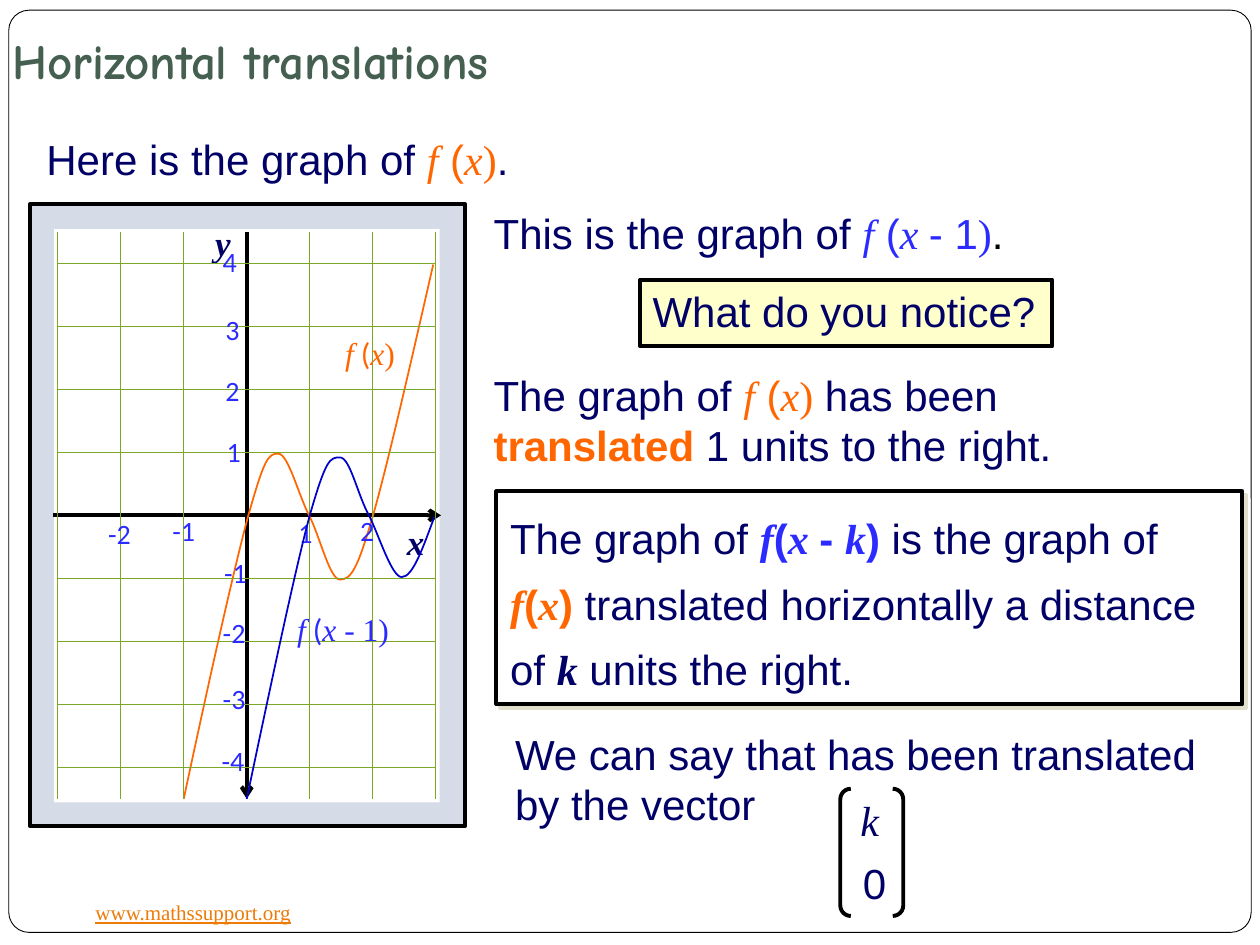
from lxml import etree
from pptx import Presentation
from pptx.dml.color import RGBColor
from pptx.enum import shapes, text
from pptx.oxml import ns
from pptx.util import Pt

SANS, SERIF, LABEL, HEADING = "Arial", "Times New Roman", "Calibri", "Comic Neue"
NAVY, BLUE, ORANGE, BLACK, WHITE = "010066", "2B2BFF", "FF6600", "000000", "FFFFFF"
GREEN, CURVE_BLUE = "7CA827", "0000CC"
ORIGIN_X, ORIGIN_Y, UNIT = 141, 294.5, 36


def rgb(color):
    return RGBColor.from_string(color)


def run(words, color=NAVY, font=SANS, bold=False, italic=False):
    return words, color, font, bold, italic


def variable(words, color, bold=False):
    return run(words, color, SERIF, bold, True)


def f_of_x(color, opening_font=SANS):
    return [variable("f", color), run(" (", color, opening_font),
            variable("x", color), run(")", color, SERIF)]


def graph_point(x, y):
    """Turn graph units into slide points."""
    return ORIGIN_X + x * UNIT, ORIGIN_Y - y * UNIT


class Board:
    def __init__(self, slide):
        self.items = slide.shapes

    def outline(self, shape, color, width):
        if color:
            shape.line.color.rgb = rgb(color)
            shape.line.width = Pt(width)
        else:
            shape.line.fill.background()

    def box(self, at, fill=None, line=BLACK, width=2.25,
            kind=shapes.MSO_SHAPE.RECTANGLE, adjust=None):
        shape = self.items.add_shape(kind, *map(Pt, at))
        shape.shadow.inherit = False
        if adjust is not None:
            shape.adjustments[0] = adjust
        if fill:
            shape.fill.solid()
            shape.fill.fore_color.rgb = rgb(fill)
        else:
            shape.fill.background()
        self.outline(shape, line, width)
        return shape

    def drop_shadow(self, shape, color, distance):
        effects = shape._element.spPr.find(ns.qn("a:effectLst"))
        shadow = etree.SubElement(effects, ns.qn("a:outerShdw"), dist=str(Pt(distance)),
                                  dir="2700000", algn="ctr", rotWithShape="0")
        etree.SubElement(shadow, ns.qn("a:srgbClr"), val=color)

    def line(self, start, end, color, width, arrow=False):
        connector = self.items.add_connector(
            shapes.MSO_CONNECTOR.STRAIGHT, *map(Pt, start + end))
        self.outline(connector, color, width)
        properties = connector._element.spPr
        if arrow:
            etree.SubElement(properties.find(ns.qn("a:ln")), ns.qn("a:tailEnd"), type="arrow")
        etree.SubElement(properties, ns.qn("a:effectLst"))

    def curve(self, knots, color):
        """Draw Bezier segments: a start, then two handles and an end for each."""
        points = [tuple(map(Pt, graph_point(x, y))) for x, y in knots]
        builder = self.items.build_freeform(*points[0])
        builder.add_line_segments(points[1:], close=False)
        shape = builder.convert_to_shape()
        shape.shadow.inherit = False
        shape.fill.background()
        self.outline(shape, color, 1)
        steps = list(shape._element.iter(ns.qn("a:lnTo")))
        outline = steps[0].getparent()
        for first in range(0, len(steps), 3):
            segment = etree.SubElement(outline, ns.qn("a:cubicBezTo"))
            for step in steps[first:first + 3]:
                segment.append(step[0])
                outline.remove(step)

    def label(self, at, size, runs, wrap=False, spacing=None):
        return self.fill_text(self.items.add_textbox(*map(Pt, at)), size, runs, wrap, spacing)

    def fill_text(self, shape, size, runs, wrap=False, spacing=None):
        frame = shape.text_frame
        frame.word_wrap = wrap
        frame.auto_size = text.MSO_AUTO_SIZE.SHAPE_TO_FIT_TEXT
        frame.vertical_anchor = text.MSO_ANCHOR.TOP
        paragraph = frame.paragraphs[0]
        paragraph.alignment = text.PP_ALIGN.LEFT
        if spacing:
            paragraph.line_spacing = spacing
        for words, color, font, bold, italic in runs:
            piece = paragraph.add_run()
            piece.text = words
            piece.font.size = Pt(size)
            piece.font.name = font
            piece.font.bold = bold
            piece.font.italic = italic
            piece.font.color.rgb = rgb(color)
        return frame


def draw_graph(board):
    board.line((30.5, ORIGIN_Y), (252, ORIGIN_Y), BLACK, 2.25, arrow=True)
    board.label((225.4, 293.8, 24.5, 31), 20, [variable("x", NAVY, True)])
    board.line((ORIGIN_X, 132.5), (ORIGIN_X, 456.5), BLACK, 2.25, arrow=True)
    board.label((115.9, 123.1, 23, 31), 20, [variable("y", NAVY, True)])

    board.curve([(-1, -4.5), (-.62, -2.72), (-.22, -.92), (.02, -.02),
                 (.28, .9), (.34, .98), (.5, .98),
                 (.66, .98), (.82, .32), (1, -.02),
                 (1.16, -.34), (1.32, -1.02), (1.48, -1.02),
                 (1.66, -1.02), (1.76, -.84), (2, -.02),
                 (2.24, .82), (2.6, 2.4), (2.96, 3.98)], ORANGE)

    for x in (-3, -2, -1, 1, 2, 3):
        board.line(graph_point(x, 4.5), graph_point(x, -4.5), GREEN, 0.75)
    for y in (-4, -3, -2, -1, 1, 2, 3, 4):
        board.line(graph_point(-3, y), graph_point(3, y), GREEN, 0.75)

    ticks = [("-2", 54.7, 291.6), ("-1", 91.4, 290.2), ("1", 163.4, 290.9), ("2", 198.7, 290.2),
             ("4", 120.2, 136.1), ("3", 121.7, 175), ("2", 121.7, 210.2), ("1", 122.4, 244.8),
             ("-1", 121, 313.9), ("-2", 120.2, 348.5), ("-3", 120.2, 385.9), ("-4", 119.5, 421.2)]
    for number, left, top in ticks:
        width = 27.4 if number.startswith("-") else 23
        board.label((left, top, width, 26.6), 16, [run(number, BLUE, LABEL)])

    board.label((190.1, 187.2, 43.2, 28.8), 18, f_of_x(ORANGE, LABEL))
    board.label((162.7, 344.9, 67.7, 28.8), 18,
                [variable("f", BLUE), run(" (", BLUE, LABEL), variable("x ", BLUE),
                 run("- 1)", BLUE, SERIF)])
    board.curve([(0, -4.5), (.38, -2.7), (.76, -.9), (1, 0),
                 (1.26, .9), (1.32, .92), (1.48, .92),
                 (1.64, .92), (1.76, .32), (1.94, 0),
                 (2.1, -.32), (2.3, -.98), (2.46, -.98),
                 (2.64, -.98), (2.8, -.5), (2.98, -.02)], CURVE_BLUE)


def draw_explanation(board):
    board.label((275, 115.2, 308.9, 36), 24,
                [run("This is the graph of "), variable("f", BLUE), run(" (", BLUE),
                 variable("x ", BLUE), run("- 1", BLUE), run(")", BLUE, SERIF), run(".", BLACK)])
    question = board.box((365.8, 159.8, 235.4, 38.2), "FFFFCC")
    board.fill_text(question, 24, [run("What do you notice?")])
    board.label((275, 207.4, 398.2, 65.5), 24,
                [run("The graph of "), *f_of_x(ORANGE), run(" has been "),
                 run("translated", ORANGE, bold=True), run(" 1 units to the right.")], wrap=True)

    rule = board.box((283.7, 280.8, 426.2, 121.7), WHITE)
    board.drop_shadow(rule, "E2DFCC", 2.8)
    board.label((284.4, 280.8, 426.2, 122.4), 24,
                [run("The graph of "),
                 variable("f", BLUE, True), run("(", BLUE, bold=True),
                 variable("x ", BLUE, True), run("- ", BLUE, bold=True),
                 variable("k", BLUE, True), run(") ", BLUE, bold=True),
                 run("is the graph of "),
                 variable("f", ORANGE, True), run("(", ORANGE, bold=True),
                 variable("x", ORANGE, True), run(")", ORANGE, bold=True),
                 run(" translated horizontally a distance of "),
                 variable("k", NAVY, True), run(" units the right.")], wrap=True, spacing=1.3)

    board.label((287.3, 412.6, 412.6, 65.5), 24,
                [run("We can say that has been translated by the vector")], wrap=True)
    board.label((484.6, 450.7, 26, 36), 24, [variable("k", NAVY)], wrap=True)
    board.label((486, 486.7, 27.4, 36), 24, [run("0")], wrap=True)
    board.box((480.2, 450.7, 36, 72.7), kind=shapes.MSO_SHAPE.DOUBLE_BRACKET, adjust=0.167)


def main():
    deck = Presentation()
    deck.slide_width, deck.slide_height = Pt(720), Pt(540)
    board = Board(deck.slides.add_slide(deck.slide_layouts[6]))

    board.box((5, 5.8, 710, 527), WHITE, width=0.5,
              kind=shapes.MSO_SHAPE.ROUNDED_RECTANGLE, adjust=0.022)
    site = board.label((47.5, 510.5, 127.4, 21.6), 12,
                       [run("www.mathssupport.org", "EE7B08", SERIF)])
    site.paragraphs[0].runs[0].font.underline = True
    board.box((17.3, 116.6, 248.4, 355.7), "D5DCE7")
    board.box((31, 131, 220.3, 327.6), WHITE, line=None)

    title = board.label((0, 21.6, 648, 36.7), 28,
                        [run("Horizontal translations", "455F51", HEADING, bold=True)], wrap=True)
    title.auto_size = text.MSO_AUTO_SIZE.NONE
    title.vertical_anchor = text.MSO_ANCHOR.BOTTOM
    title.margin_bottom = Pt(7.2)
    board.label((19.4, 72.7, 685.4, 36), 24,
                [run("Here is the graph of "), *f_of_x(ORANGE), run(".")], wrap=True)

    draw_explanation(board)
    draw_graph(board)
    deck.save("out.pptx")


if __name__ == "__main__":
    main()
